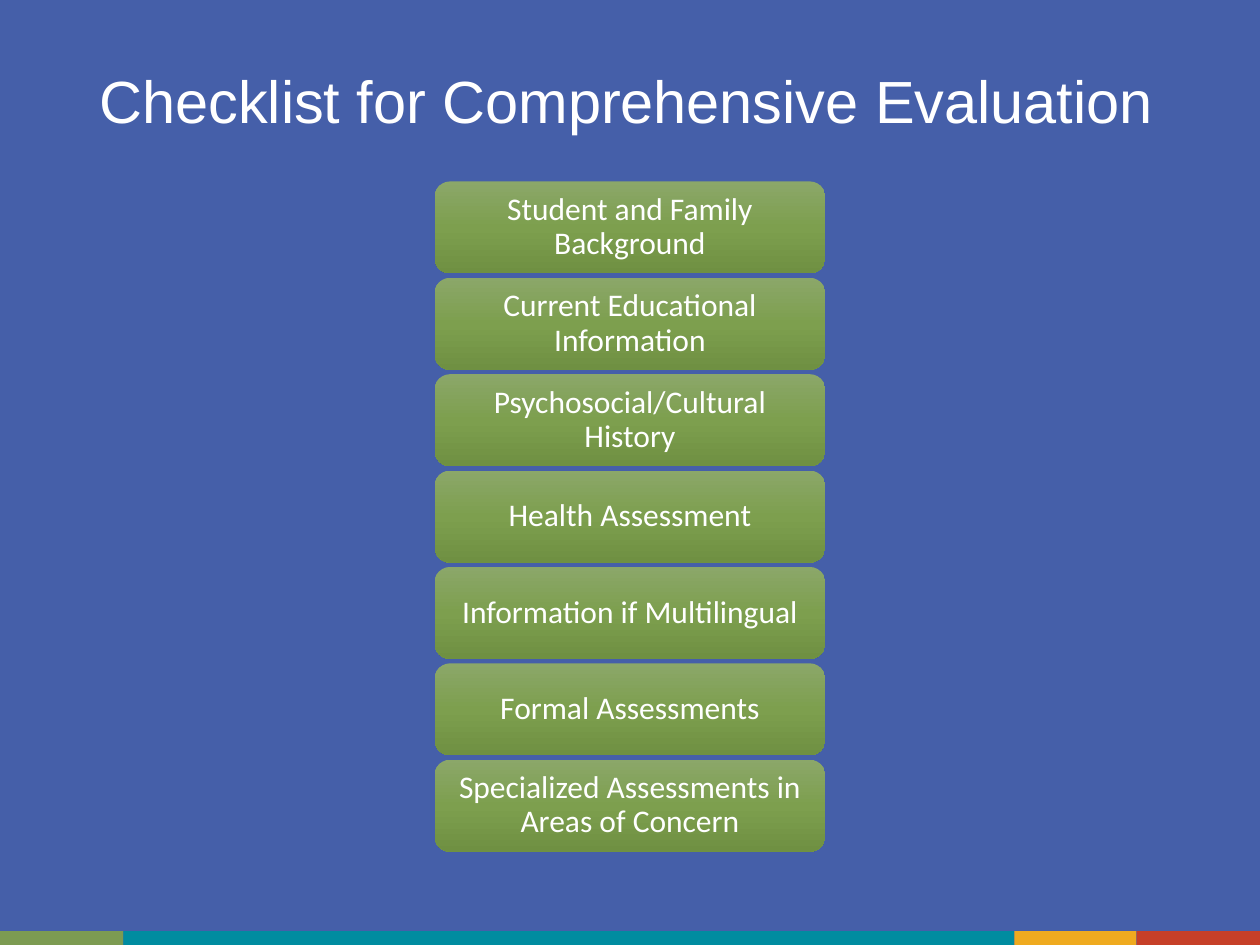
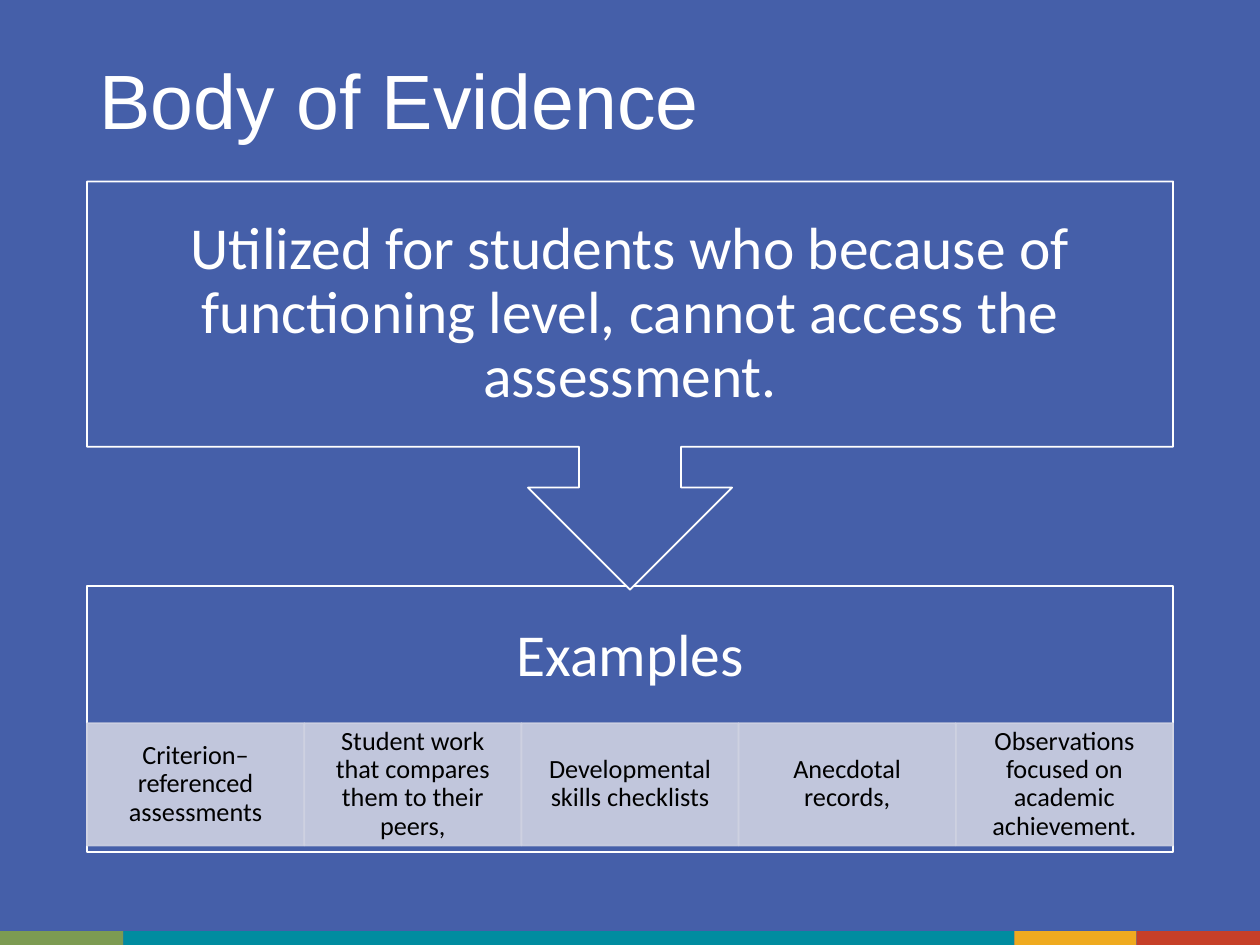
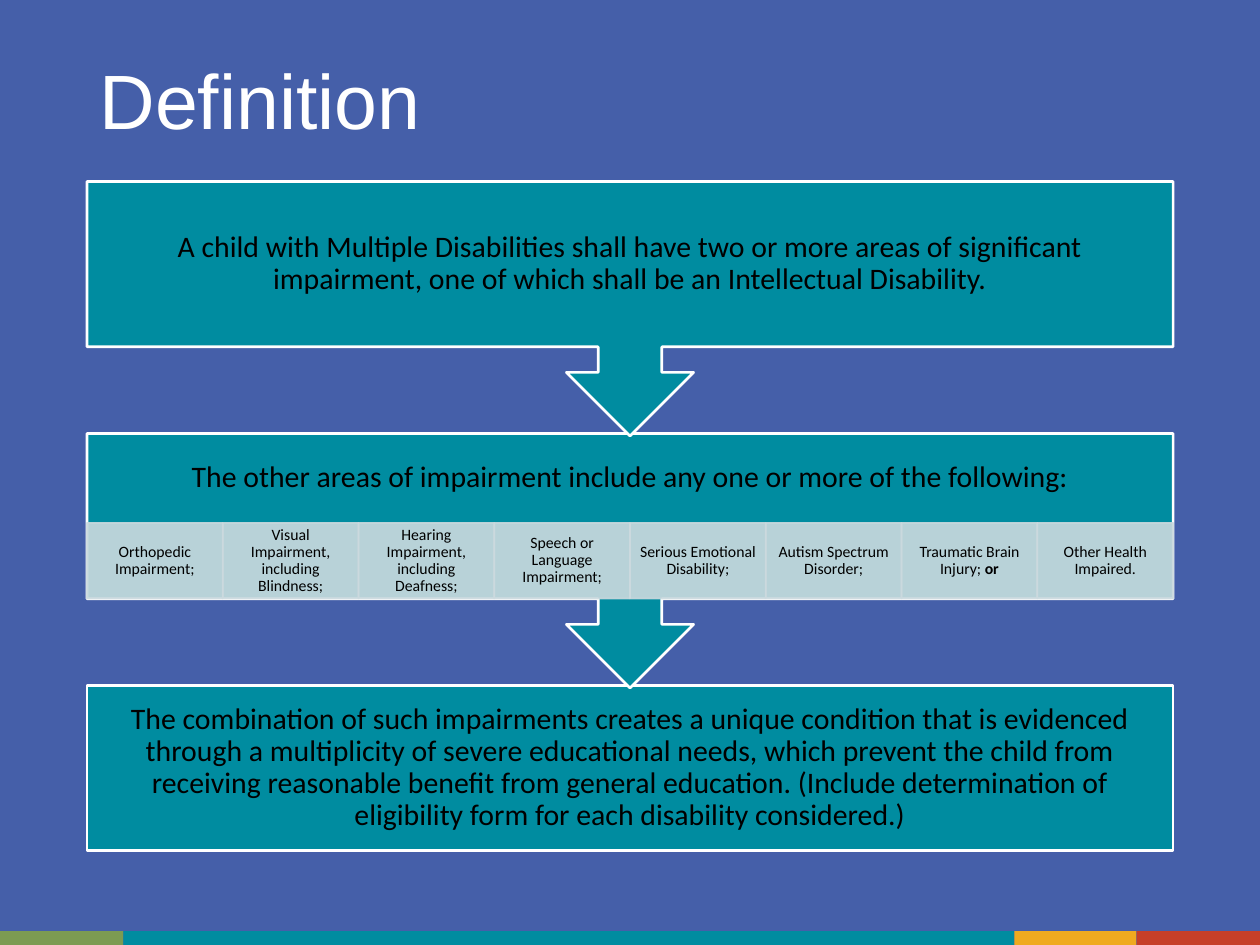
from copy import deepcopy
from typing import NamedTuple

from lxml.etree import SubElement
from pptx import Presentation
from pptx.dml.color import RGBColor
from pptx.enum.shapes import MSO_SHAPE as Preset
from pptx.enum.text import MSO_ANCHOR as Anchor, MSO_AUTO_SIZE as AutoSize, PP_ALIGN as Align
from pptx.oxml.ns import qn
from pptx.util import Inches, Pt

# Shared colours and fonts
BLUE = RGBColor(0x45, 0x5F, 0xA9)
TEAL = RGBColor(0x00, 0x8C, 0xA0)
GREEN = RGBColor(0x7C, 0x9B, 0x52)
YELLOW = RGBColor(0xEF, 0xAA, 0x1F)
RED = RGBColor(0xC6, 0x3F, 0x28)
WHITE = RGBColor(0xFF, 0xFF, 0xFF)
BLACK = RGBColor(0x00, 0x00, 0x00)
PALE_BLUE = RGBColor(0xCF, 0xD2, 0xE2)
PALE_TEAL = RGBColor(0xCC, 0xDA, 0xDF)
GREEN_STOPS = (
    (0, RGBColor(0x8B, 0xA7, 0x69)),
    (0.5, RGBColor(0x7D, 0x9F, 0x4E)),
    (1, RGBColor(0x6F, 0x90, 0x42)),
)
TITLE_FONT, BODY_FONT = "Arial", "Calibri"
TITLE_ONLY = 5


class Box(NamedTuple):
    left: float
    top: float
    width: float
    height: float

    def lengths(self):
        return [Inches(value) for value in self]


TITLE_BOX = Box(0.69, 0.4, 8.62, 0.86)
CONTENT_BOX = Box(0.69, 1.44, 8.62, 5.32)
FOOTER_BOX = Box(0, 7.39, 10, 0.11)
FOOTER_BANDS = ((0.98, GREEN), (7.07, TEAL), (0.97, YELLOW), (0.98, RED))


def write_text(shape, text, *, size, color, font=BODY_FONT, align=Align.CENTER,
               insets=(0.1, 0.05, 0.1, 0.05), bold_end=""):
    """Fill a shape with one paragraph; insets run left, top, right, bottom."""
    frame = shape.text_frame
    frame.word_wrap = True
    frame.auto_size = AutoSize.NONE
    frame.vertical_anchor = Anchor.MIDDLE
    (frame.margin_left, frame.margin_top,
     frame.margin_right, frame.margin_bottom) = map(Inches, insets)
    para = frame.paragraphs[0]
    para.alignment = align
    para.line_spacing = 0.9
    for words, bold in ((text, False), (bold_end, True)):
        if words:
            span = para.add_run()
            span.text = words
            span.font.name = font
            span.font.size = Pt(size)
            span.font.bold = bold
            span.font.color.rgb = color


def add_block(page, preset, box, fill, line=None, line_width=1):
    shape = page.shapes.add_shape(preset, *box.lengths())
    shape.shadow.inherit = False
    shape.fill.solid()
    shape.fill.fore_color.rgb = fill
    if line is None:
        shape.line.fill.background()
    else:
        shape.line.color.rgb = line
        shape.line.width = Pt(line_width)
    return shape


def shade_green(shape):
    fill = shape.fill
    fill.gradient()
    fill.gradient_angle = 270
    stop_list = shape._element.spPr.find(".//" + qn("a:gsLst"))
    stop_list.insert(1, deepcopy(stop_list[0]))
    for stop, (position, color) in zip(fill.gradient_stops, GREEN_STOPS):
        stop.position = position
        stop.color.rgb = color


def set_opacity(shape, percent):
    """Apply to both the fill and the outline."""
    for color in shape._element.spPr.iter(qn("a:srgbClr")):
        SubElement(color, qn("a:alpha")).set("val", str(percent * 1000))


def add_footer(page, box):
    left = box.left
    for width, color in FOOTER_BANDS:
        add_block(page, Preset.RECTANGLE, Box(left, box.top, width, box.height), color)
        left += width


def add_page(deck, title, title_size=44):
    page = deck.slides.add_slide(deck.slide_layouts[TITLE_ONLY])
    add_footer(page, FOOTER_BOX)
    heading = page.shapes.title
    heading.left, heading.top, heading.width, heading.height = TITLE_BOX.lengths()
    write_text(heading, title, size=title_size, color=WHITE, font=TITLE_FONT, align=Align.LEFT)
    return page


def add_checklist(page, box, items, width=3.1, gap=0.035):
    """Stack of equal rounded bars, centred in the box."""
    height = (box.height - gap * (len(items) - 1)) / len(items)
    left = box.left + (box.width - width) / 2
    for index, item in enumerate(items):
        top = box.top + index * (height + gap)
        bar = add_block(page, Preset.ROUNDED_RECTANGLE, Box(left, top, width, height), GREEN)
        shade_green(bar)
        write_text(bar, item, size=18, color=WHITE, insets=(0.07, 0.04, 0.07, 0.04))


def add_cell_row(page, box, items, fill, size, insets):
    """Equal cells side by side; an item is (text, bold ending)."""
    width = box.width / len(items)
    for index, (text, bold_end) in enumerate(items):
        cell_box = Box(box.left + index * width, box.top, width, box.height)
        cell = add_block(page, Preset.RECTANGLE, cell_box, fill, fill)
        set_opacity(cell, 90)
        write_text(cell, text, size=size, color=BLACK, insets=insets, bold_end=bold_end)


def add_step(page, preset, box, text, *, fill, line_width, size, color, inset, below=0):
    """One step of a process; below is the height kept free under the text."""
    step = add_block(page, preset, box, fill, WHITE, line_width)
    write_text(step, text, size=size, color=color, insets=(inset, inset, inset, inset + below))


def build_checklist(deck):
    page = add_page(deck, "Checklist for Comprehensive Evaluation", 34)
    add_checklist(page, CONTENT_BOX, (
        "Student and Family Background",
        "Current Educational Information",
        "Psychosocial/Cultural History",
        "Health Assessment",
        "Information if Multilingual",
        "Formal Assessments",
        "Specialized Assessments in Areas of Concern",
    ))


def build_evidence(deck):
    page = add_page(deck, "Body of Evidence")
    left, top, width, _ = CONTENT_BOX
    style = dict(fill=BLUE, line_width=1, size=34, color=WHITE, inset=0.26)
    # Lower box with its row of examples
    lower = Box(left, top + 3.21, width, 2.11)
    add_step(page, Preset.RECTANGLE, lower, "Examples", below=0.97, **style)
    examples = (
        "Criterion–referenced assessments",
        "Student work that compares them to their peers,",
        "Developmental skills checklists",
        "Anecdotal records,",
        "Observations focused on academic achievement.",
    )
    add_cell_row(page, Box(left, lower.top + 1.09, width, 0.97),
                 [(text, "") for text in examples], PALE_BLUE, 15, (0.12, 0.02, 0.12, 0.02))
    # Upper box pointing down
    add_step(page, Preset.DOWN_ARROW_CALLOUT, Box(left, top, width, 3.24),
             "Utilized for students who because of functioning level, cannot access "
             "the assessment.", **style)


def build_definition(deck):
    page = add_page(deck, "Definition")
    left, top, width, _ = CONTENT_BOX
    pitch, arrow_height = 2, 2.02
    style = dict(fill=TEAL, line_width=1.5, size=17, color=BLACK, inset=0.13)
    # Steps run from the last to the first so each arrow tip lies on top
    add_step(page, Preset.RECTANGLE, Box(left, top + 2 * pitch, width, 1.31),
             "The combination of such impairments creates a unique condition that is "
             "evidenced through a multiplicity of severe educational needs, which prevent "
             "the child from receiving reasonable benefit from general education. (Include "
             "determination of eligibility form for each disability considered.)", **style)
    middle = Box(left, top + pitch, width, arrow_height)
    add_step(page, Preset.DOWN_ARROW_CALLOUT, middle,
             "The other areas of impairment include any one or more of the following:",
             below=0.6, **style)
    add_cell_row(page, Box(left, middle.top + 0.71, width, 0.6), (
        ("Orthopedic Impairment;", ""),
        ("Visual Impairment, including Blindness;", ""),
        ("Hearing Impairment, including Deafness;", ""),
        ("Speech or Language Impairment;", ""),
        ("Serious Emotional Disability;", ""),
        ("Autism Spectrum Disorder;", ""),
        ("Traumatic Brain Injury; ", "or"),
        ("Other Health Impaired.", ""),
    ), PALE_TEAL, 9, (0.07, 0.01, 0.07, 0.01))
    add_step(page, Preset.DOWN_ARROW_CALLOUT, Box(left, top, width, arrow_height),
             "A child with Multiple Disabilities shall have two or more areas of significant "
             "impairment, one of which shall be an Intellectual Disability.", **style)


def main():
    deck = Presentation()
    deck.slide_width, deck.slide_height = Inches(10), Inches(7.5)
    backdrop = deck.slide_master.background.fill
    backdrop.solid()
    backdrop.fore_color.rgb = BLUE
    build_checklist(deck)
    build_evidence(deck)
    build_definition(deck)
    deck.save("out.pptx")


if __name__ == "__main__":
    main()
